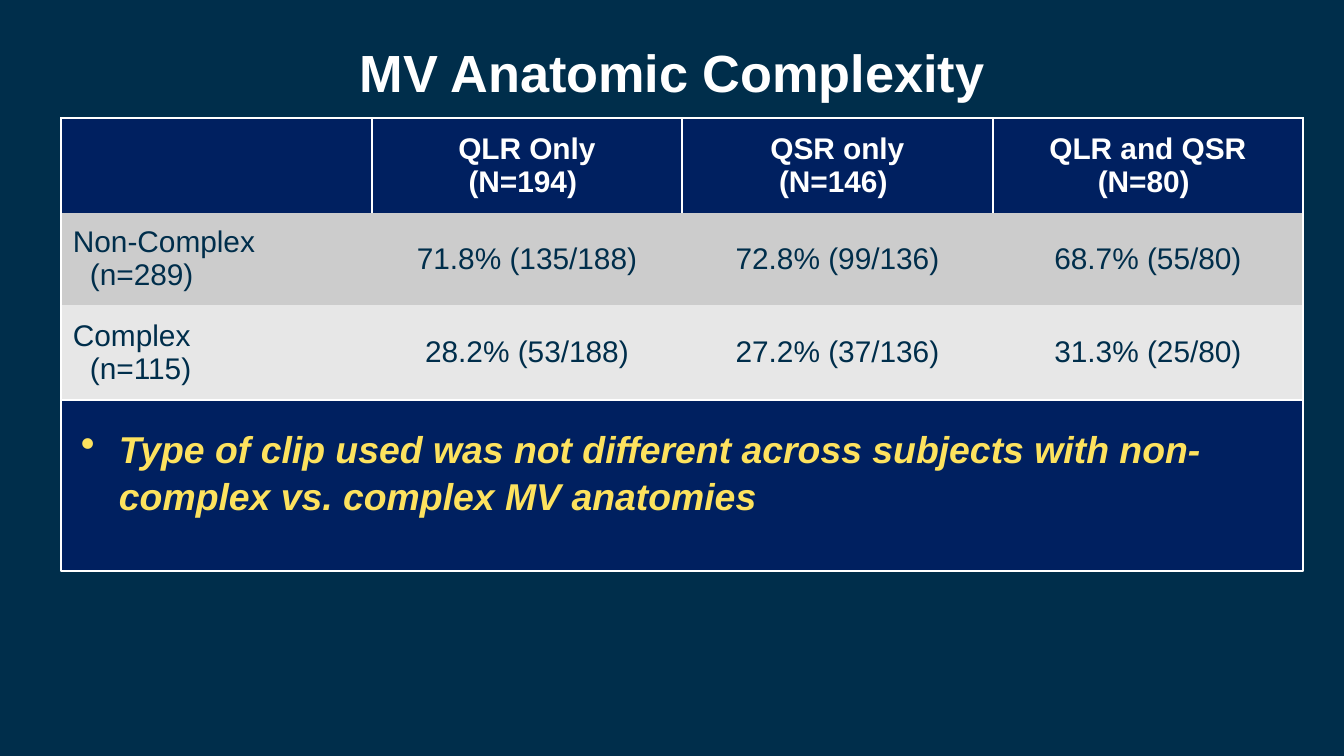
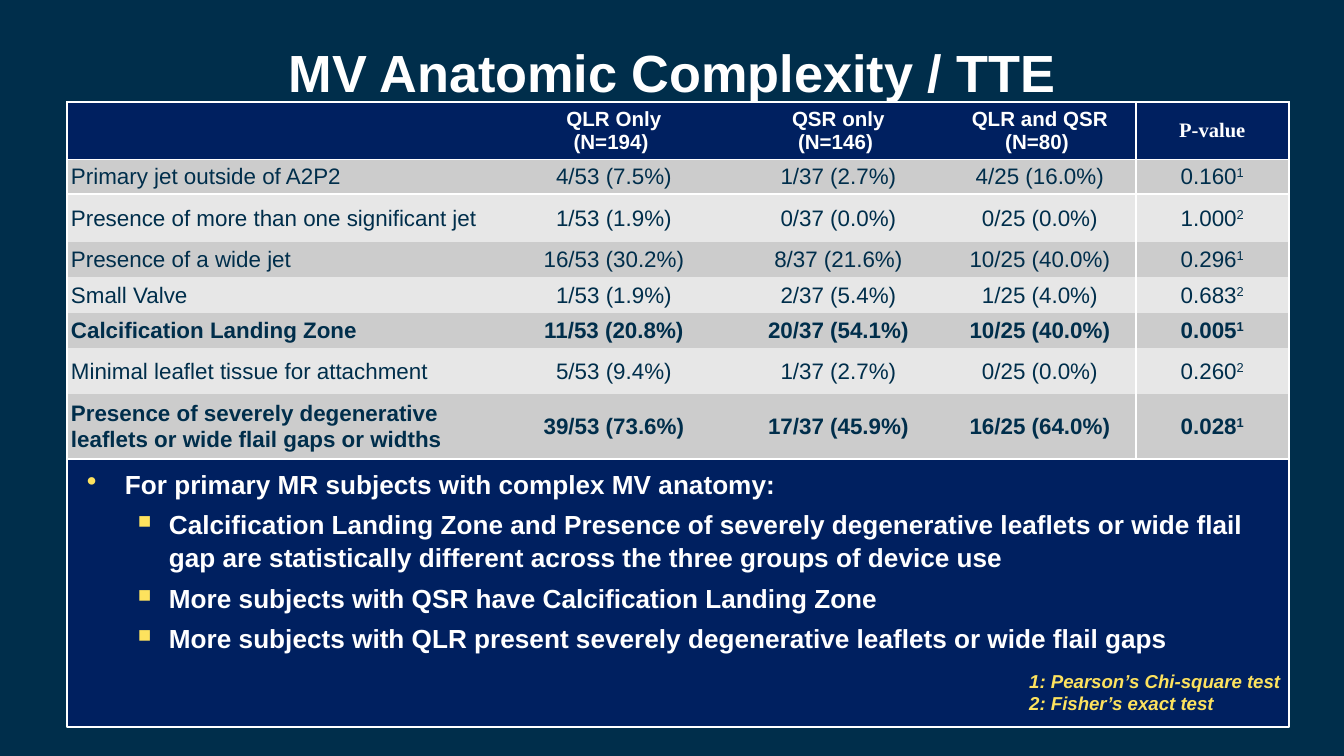
from lxml.etree import SubElement
from pptx import Presentation
from pptx.dml.color import RGBColor
from pptx.enum.shapes import MSO_SHAPE
from pptx.enum.text import MSO_ANCHOR, PP_ALIGN
from pptx.oxml import parse_xml
from pptx.oxml.ns import nsdecls, qn
from pptx.util import Emu, Pt

FONT = "Arial"
INK, NAVY, WHITE, YELLOW = "002E4B", "002060", "FFFFFF", "FDE25E"
BANDS = ("CCCCCC", "E7E7E7")
NO_TABLE_STYLE = "{2D5ABB26-0587-4C30-8999-92F81FD0307C}"
HEADERS = ["", "QLR Only\v(N=194) ", "QSR only\v(N=146) ", "QLR and QSR\v(N=80) "]


def px(length):
    return Emu(round(length * 914400 / 134.4))


def color(value):
    return RGBColor.from_string(value)


class Deck:
    def __init__(self):
        self.deck = Presentation()
        self.deck.slide_width, self.deck.slide_height = px(1344), px(756)
        self.page = None

    def add_page(self, title):
        self.page = self.deck.slides.add_slide(self.deck.slide_layouts[6])
        fill = self.page.background.fill
        fill.solid()
        fill.fore_color.rgb = color(INK)
        frame = self.text_box(101, 30, 1142, 83)
        frame.vertical_anchor = MSO_ANCHOR.MIDDLE
        self.style(frame.paragraphs[0], title, 28, WHITE, align=PP_ALIGN.CENTER)

    def text_box(self, left, top, width, height):
        box = self.page.shapes.add_textbox(px(left), px(top), px(width), px(height))
        box.text_frame.word_wrap = True
        return box.text_frame

    def style(self, para, text, size, ink, bold=True, italic=False,
              align=PP_ALIGN.LEFT, font=FONT, margin=0):
        para.text = text
        para.alignment = align
        if margin:
            para._p.get_or_add_pPr().set("marL", str(px(margin)))
        para.font.name, para.font.size = font, Pt(size)
        para.font.bold, para.font.italic = bold, italic
        para.font.color.rgb = color(ink)

    def bullet(self, para, char, percent, margin, hang):
        props = para._p.get_or_add_pPr()
        props.set("marL", str(px(margin)))
        props.set("indent", str(-px(hang)))
        tint = SubElement(props, qn("a:buClr"))
        SubElement(tint, qn("a:srgbClr")).set("val", YELLOW)
        SubElement(props, qn("a:buSzPct")).set("val", str(percent * 1000))
        SubElement(props, qn("a:buChar")).set("char", char)

    def panel(self, left, top, width, height, text_top, items, size, ink, italic=False):
        box = self.page.shapes.add_shape(
            MSO_SHAPE.RECTANGLE, px(left), px(top), px(width), px(height))
        box.shadow.inherit = False
        box.fill.solid()
        box.fill.fore_color.rgb = color(NAVY)
        box.line.color.rgb = color(WHITE)
        box.line.width = Pt(0.75)
        frame = box.text_frame
        frame.word_wrap = True
        frame.vertical_anchor = MSO_ANCHOR.TOP
        frame.margin_left, frame.margin_top = px(20), px(text_top)
        frame.margin_right, frame.margin_bottom = px(13), px(7)
        for index, (level, text) in enumerate(items):
            para = frame.add_paragraph() if index else frame.paragraphs[0]
            if level:
                self.bullet(para, "■", 70, 82, 31)
            else:
                self.bullet(para, "•", 110, 38, 38)
            para.line_spacing = 1.05
            if index:
                para.space_before = Pt(4)
            self.style(para, text, size, ink, italic=italic)

    def table(self, left, top, widths, heights, rows, size, header_size, inner_edges,
              bold_rows=()):
        shape = self.page.shapes.add_table(
            len(rows), len(widths), px(left), px(top), px(sum(widths)), px(sum(heights)))
        grid = shape.table
        grid.first_row = grid.horz_banding = False
        grid._tbl.tblPr.find(qn("a:tableStyleId")).text = NO_TABLE_STYLE
        for column, width in zip(grid.columns, widths):
            column.width = px(width)
        for row, height in zip(grid.rows, heights):
            row.height = px(height)
        last_row, last_column = len(rows) - 1, len(widths) - 1
        for r, row in enumerate(rows):
            for c, text in enumerate(row):
                cell = grid.cell(r, c)
                cell.fill.solid()
                cell.fill.fore_color.rgb = color(BANDS[(r - 1) % 2] if r else NAVY)
                edges = inner_edges(r, c)
                edges += "L" * (c == 0) + "R" * (c == last_column)
                edges += "T" * (r == 0) + "B" * (r == last_row)
                self.borders(cell, edges)
                self.fill_cell(cell, text, header_size if r == 0 else size,
                               WHITE if r == 0 else INK, r == 0 or r in bold_rows,
                               PP_ALIGN.CENTER if c else PP_ALIGN.LEFT)

    def fill_cell(self, cell, text, size, ink, bold, align):
        cell.vertical_anchor = MSO_ANCHOR.MIDDLE
        cell.margin_left = cell.margin_right = px(4)
        cell.margin_top = cell.margin_bottom = px(4)
        frame = cell.text_frame
        font = "Times New Roman" if text == "P-value" else FONT
        if isinstance(text, tuple):
            label, count = text
            self.style(frame.paragraphs[0], label, size, ink, bold, margin=8)
            self.style(frame.add_paragraph(), count, size, ink, bold, margin=25)
            return
        value, _, note = text.partition("^")
        para = frame.paragraphs[0]
        self.style(para, value, size, ink, bold, align=align, font=font)
        if note:
            span = para.add_run()
            span.text = note
            span._r.get_or_add_rPr().set("baseline", "30000")

    def borders(self, cell, edges):
        props = cell._tc.get_or_add_tcPr()
        drawn = [side for side in "LRTB" if side in edges]
        for index, side in enumerate(drawn):
            props.insert(index, parse_xml(
                f'<a:ln{side} {nsdecls("a")} w="12700"><a:solidFill>'
                f'<a:srgbClr val="{WHITE}"/></a:solidFill></a:ln{side}>'))

    def footnotes(self, left, top, width, height, notes):
        frame = self.text_box(left, top, width, height)
        for index, note in enumerate(notes):
            para = frame.add_paragraph() if index else frame.paragraphs[0]
            self.style(para, note, 10, YELLOW, italic=True, margin=9)


def header_dividers(row, column):
    return "LR" if row == 0 else ""


def p_value_dividers(row, column):
    return {0: "B", 1: "T"}.get(row, "") + {3: "R", 4: "L"}.get(column, "")


def complexity_page(deck):
    deck.add_page("MV Anatomic Complexity")
    deck.panel(61, 118, 1242, 453, 306, [
        (0, "Type of clip used was not different across subjects with "
            "non-complex vs. complex MV anatomies"),
    ], 20, YELLOW, italic=True)
    deck.table(61, 118, [311, 310, 311, 310], [95, 92, 95], [
        HEADERS,
        [("Non-Complex", "(n=289)"), "71.8% (135/188)", "72.8% (99/136)", "68.7% (55/80)"],
        [("Complex", "(n=115)"), "28.2% (53/188)", "27.2% (37/136)", "31.3% (25/80)"],
    ], 16, 16, header_dividers)


def echo_page(deck):
    deck.add_page("MV Anatomic Complexity / TTE")
    deck.panel(67, 102, 1222, 625, 365, [
        (0, "For primary MR subjects with complex MV anatomy:"),
        (1, "Calcification Landing Zone and Presence of severely degenerative leaflets "
            "or wide flail gap are statistically different across the three groups "
            "of device use"),
        (1, "More subjects with QSR have Calcification Landing Zone"),
        (1, "More subjects with QLR present severely degenerative leaflets "
            "or wide flail gaps"),
    ], 14, WHITE)
    deck.table(67, 102, [428, 238, 211, 192, 153], [55, 35, 48, 35, 36, 35, 46, 65], [
        HEADERS + ["P-value"],
        ["Primary jet outside of A2P2",
         "4/53 (7.5%)", "1/37 (2.7%)", "4/25 (16.0%)", "0.160^1"],
        ["Presence of more than one significant jet",
         "1/53 (1.9%)", "0/37 (0.0%)", "0/25 (0.0%)", "1.000^2"],
        ["Presence of a wide jet",
         "16/53 (30.2%)", "8/37 (21.6%)", "10/25 (40.0%)", "0.296^1"],
        ["Small Valve",
         "1/53 (1.9%)", "2/37 (5.4%)", "1/25 (4.0%)", "0.683^2"],
        ["Calcification Landing Zone",
         "11/53 (20.8%)", "20/37 (54.1%)", "10/25 (40.0%)", "0.005^1"],
        ["Minimal leaflet tissue for attachment",
         "5/53 (9.4%)", "1/37 (2.7%)", "0/25 (0.0%)", "0.260^2"],
        ["Presence of severely degenerative leaflets or wide flail gaps or widths",
         "39/53 (73.6%)", "17/37 (45.9%)", "16/25 (64.0%)", "0.028^1"],
    ], 12, 11, p_value_dividers, bold_rows=(5, 7))
    deck.footnotes(1007, 663, 302, 59,
                   ["1: Pearson’s Chi-square test", "2: Fisher’s exact test"])


def main():
    deck = Deck()
    complexity_page(deck)
    echo_page(deck)
    deck.deck.save("out.pptx")


if __name__ == "__main__":
    main()
